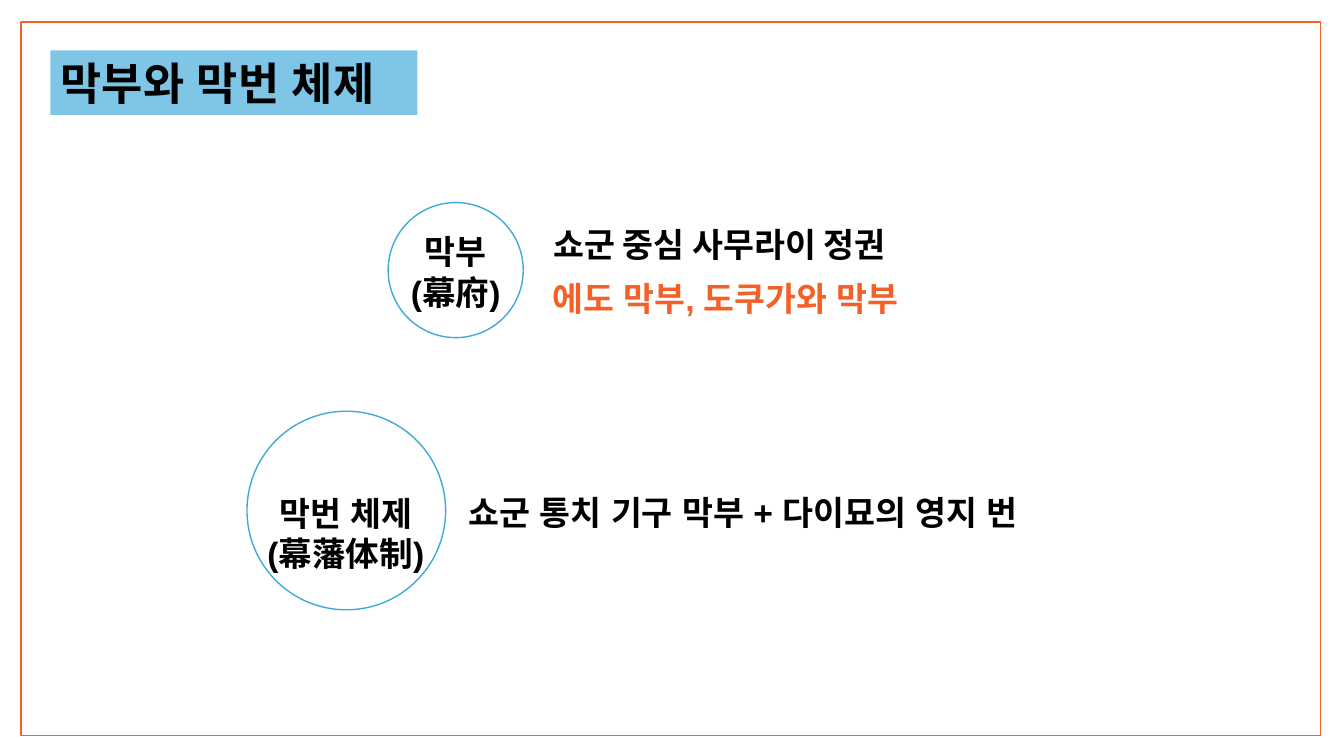
from lxml.etree import SubElement
from pptx import Presentation
from pptx.dml.color import RGBColor
from pptx.enum.shapes import MSO_SHAPE as Preset
from pptx.enum.text import MSO_ANCHOR as Anchor, PP_ALIGN as Align
from pptx.oxml.ns import qn
from pptx.util import Inches, Pt

COLORS = {
    "orange": "F46128",
    "sky": "7FC6E6",
    "ring": "3EAADA",
    "paper": "FFFFFF",
    "ink": "000000",
}


def color(name):
    return RGBColor.from_string(COLORS[name])


def inches(box):
    return [Inches(length) for length in box]


def write(frame, lines, size=24, font="Arial", ink="ink", align=Align.LEFT):
    """Fill a text frame with bold paragraphs, one for each line."""
    frame.word_wrap = True
    frame.vertical_anchor = Anchor.MIDDLE
    for index, line in enumerate(lines):
        paragraph = frame.paragraphs[0] if index == 0 else frame.add_paragraph()
        paragraph.alignment = align
        run = paragraph.add_run()
        run.text = line
        formats = {"size": Pt(size), "bold": True, "name": font}
        for attribute, value in formats.items():
            setattr(run.font, attribute, value)
        run.font.color.rgb = color(ink)
        SubElement(run.font._element, qn("a:ea")).set("typeface", font)


def add_outline(shapes, preset, box, line, fill=None):
    outline = shapes.add_shape(preset, *inches(box))
    outline.shadow.inherit = False
    outline.line.color.rgb = color(line)
    outline.line.width = Pt(1)
    if fill:
        outline.fill.solid()
        outline.fill.fore_color.rgb = color(fill)
    else:
        outline.fill.background()


def add_text(shapes, box, lines, **style):
    write(shapes.add_textbox(*inches(box)).text_frame, lines, **style)


def add_heading(slide, box, text):
    heading = slide.shapes.title
    heading.left, heading.top, heading.width, heading.height = inches(box)
    heading.fill.solid()
    heading.fill.fore_color.rgb = color("sky")
    write(heading.text_frame, [text], size=32)


def add_term(shapes, box, label_box, label, notes):
    """Place a ringed term and its notes, offset from the ring's corner."""
    left, top, diameter = box
    add_outline(shapes, Preset.OVAL, (left, top, diameter, diameter), "ring", "paper")
    dx, dy, width, height = label_box
    add_text(shapes, (left + dx, top + dy, width, height), label, align=Align.CENTER)
    for (dx, dy, width), text, style in notes:
        add_text(shapes, (left + dx, top + dy, width, 0.5), [text], **style)


def main():
    deck = Presentation()
    deck.slide_width, deck.slide_height = Inches(13.33), Inches(7.5)
    slide = deck.slides.add_slide(deck.slide_layouts[5])
    shapes = slide.shapes

    add_outline(shapes, Preset.RECTANGLE, (0.21, 0.22, 12.89, 7.08), "orange")
    add_heading(slide, (0.5, 0.5, 3.64, 0.64), "막부와 막번 체제")
    add_term(
        shapes, (3.85, 2.01, 1.34), (-0.05, 0.23, 1.44, 0.91),
        ["막부", "(幕府)"],
        [
            ((1.54, 0.16, 4.11), "쇼군 중심 사무라이 정권", {"font": "Noto Sans CJK KR"}),
            ((1.53, 0.7, 5.26), "에도 막부, 도쿠가와 막부", {"ink": "orange"}),
        ],
    )
    add_term(
        shapes, (2.45, 4.08, 1.97), (0.08, 0.56, 1.8, 1.3),
        ["막번 체제", "(幕藩体制)"],
        [((2.1, 0.75, 6.68), "쇼군 통치 기구 막부 + 다이묘의 영지 번", {})],
    )
    deck.save("out.pptx")


if __name__ == "__main__":
    main()
